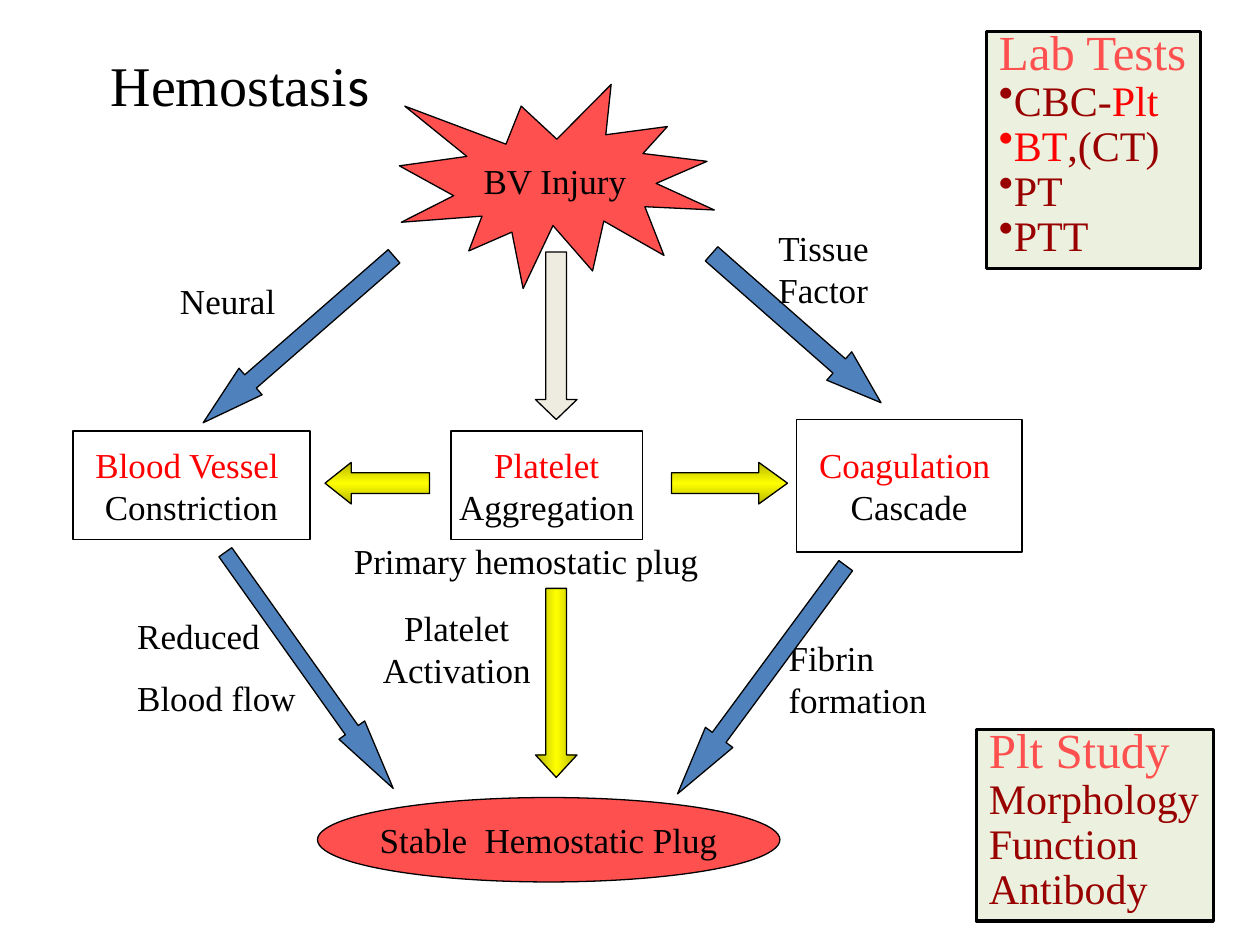
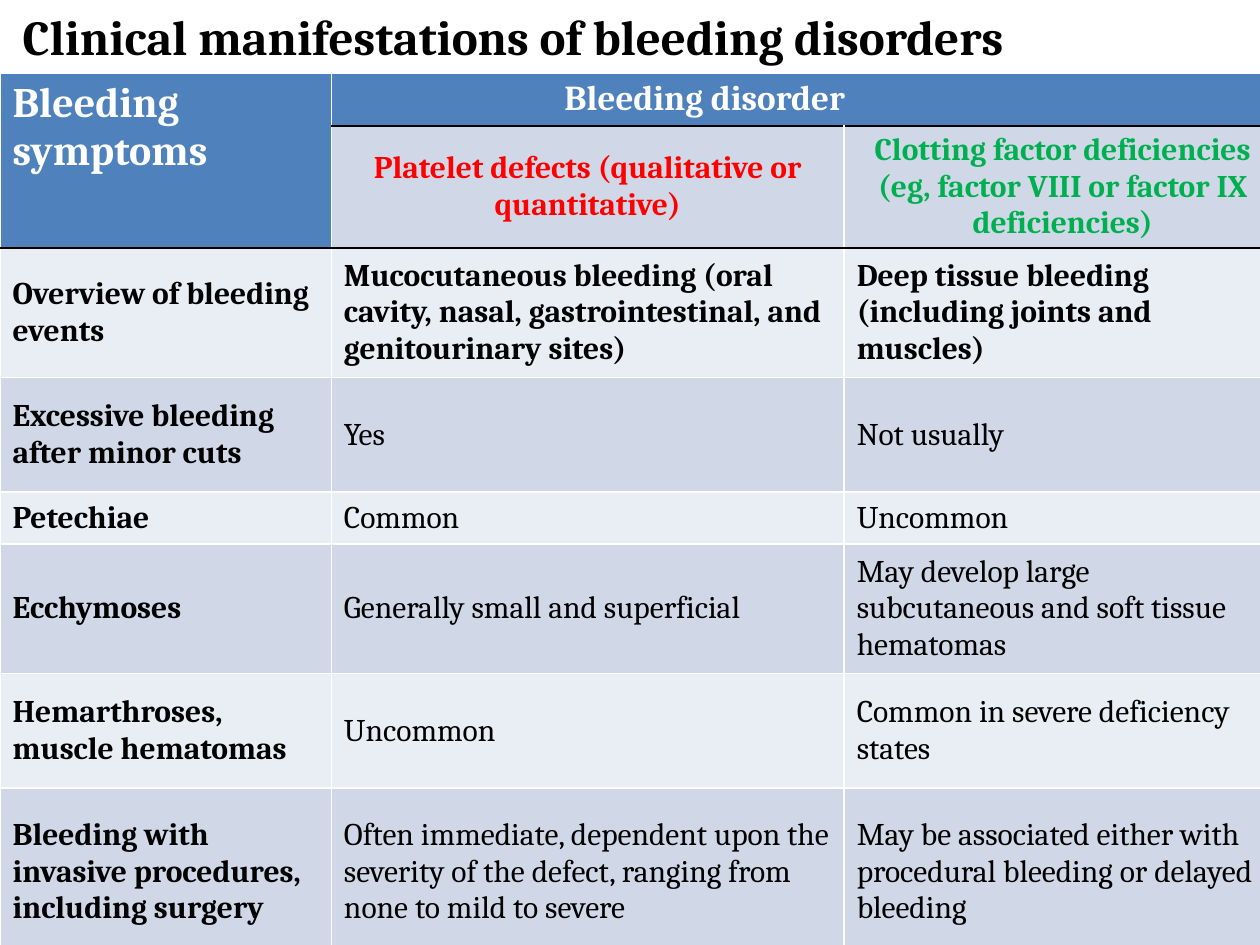
import copy

import pptx
import pptx.dml.color
import pptx.enum.shapes
import pptx.enum.text
import pptx.oxml
import pptx.oxml.ns
import pptx.util

Inches = pptx.util.Inches
Pt = pptx.util.Pt
SHAPE = pptx.enum.shapes.MSO_SHAPE
ALIGN = pptx.enum.text.PP_ALIGN
ANCHOR = pptx.enum.text.MSO_ANCHOR

COLORS = {
    "black": "000000", "white": "FFFFFF", "red": "FF0000", "coral": "FF5050",
    "maroon": "990000", "green": "00B050", "blue": "4F81BD", "cream": "EEECE1",
    "sage": "EBF1DE", "olive": "B6B600", "yellow": "FFFF00",
    "band_dark": "D0D8E8", "band_light": "E9EDF4",
}
SERIF = "Times New Roman"
TABLE_FONT = "Cambria"

COLUMN_WIDTHS = [2.63, 4.07, 3.47]
ROW_HEIGHTS = [0.38, 0.92, 1.03, 0.91, 0.41, 1.03, 0.91, 1.33]
SYMPTOMS = [
    ("Overview of bleeding events",
     "Mucocutaneous bleeding (oral cavity, nasal, gastrointestinal, and genitourinary sites)",
     "Deep tissue bleeding (including joints and muscles)"),
    ("Excessive bleeding after minor cuts", "Yes", "Not usually"),
    ("Petechiae", "Common", "Uncommon"),
    ("Ecchymoses", "Generally small and superficial",
     "May develop large subcutaneous and soft tissue hematomas"),
    ("Hemarthroses, muscle hematomas", "Uncommon",
     "Common in severe deficiency states"),
    ("Bleeding with invasive procedures, including surgery",
     "Often immediate, dependent upon the severity of the defect, "
     "ranging from none to mild to severe",
     "May be associated either with procedural bleeding or delayed bleeding"),
]


def rgb(color):
    return pptx.dml.color.RGBColor.from_string(COLORS[color])


def box(left, top, width, height):
    return Inches(left), Inches(top), Inches(width), Inches(height)


def add_run(paragraph, text, size, color="black", font=SERIF, bold=False):
    run = paragraph.add_run()
    run.text = text
    run.font.size = Pt(size)
    run.font.name = font
    run.font.bold = bold
    run.font.color.rgb = rgb(color)


def next_paragraph(frame, index, align, space_before=0):
    paragraph = frame.add_paragraph() if index else frame.paragraphs[0]
    paragraph.alignment = align
    if index and space_before:
        paragraph.space_before = Pt(space_before)
    return paragraph


def write_lines(frame, lines, align, space_before=0):
    for index, (text, color) in enumerate(lines):
        paragraph = next_paragraph(frame, index, align, space_before)
        add_run(paragraph, text, 20, color)


def add_title(slide, place, runs, size, align, anchor, bold=False):
    title = slide.shapes.title
    title.left, title.top, title.width, title.height = box(*place)
    title.text_frame.vertical_anchor = anchor
    title.text_frame.auto_size = pptx.enum.text.MSO_AUTO_SIZE.NONE
    paragraph = title.text_frame.paragraphs[0]
    paragraph.alignment = align
    for text, font in runs:
        add_run(paragraph, text, size, font=font, bold=bold)


def add_figure(slide, kind, place, fill=None, line_width=0.75):
    figure = slide.shapes.add_shape(kind, *box(*place))
    figure.shadow.inherit = False
    if fill:
        figure.fill.solid()
        figure.fill.fore_color.rgb = rgb(fill)
    else:
        figure.fill.background()
    figure.line.color.rgb = rgb("black")
    figure.line.width = Pt(line_width)
    return figure


def add_node(slide, kind, place, lines, fill=None):
    frame = add_figure(slide, kind, place, fill).text_frame
    frame.word_wrap = False
    frame.vertical_anchor = ANCHOR.MIDDLE
    write_lines(frame, lines, ALIGN.CENTER)


def add_arrow(slide, kind, place, head, fill="blue", rotation=0):
    arrow = add_figure(slide, kind, place, fill)
    arrow.adjustments[0] = 0.5
    arrow.adjustments[1] = head
    arrow.rotation = rotation
    return arrow


def add_glowing_arrow(slide, kind, place, head, angle):
    fill = add_arrow(slide, kind, place, head).fill
    fill.gradient()
    fill.gradient_angle = angle
    return fill


def shade_arrow(slide, kind, place, head, angle):
    arrow = add_arrow(slide, kind, place, head)
    arrow.fill.gradient()
    arrow.fill.gradient_angle = angle
    stop_list = next(arrow.element.iter(pptx.oxml.ns.qn("a:gsLst")))
    stop_list.append(copy.deepcopy(stop_list[0]))
    shades = [(0, "olive"), (0.5, "yellow"), (1, "olive")]
    for stop, (position, color) in zip(arrow.fill.gradient_stops, shades):
        stop.position = position
        stop.color.rgb = rgb(color)


def add_label(slide, place, lines, align=ALIGN.LEFT, anchor=ANCHOR.TOP):
    frame = slide.shapes.add_textbox(*box(*place)).text_frame
    frame.word_wrap = True
    frame.vertical_anchor = anchor
    write_lines(frame, [(line, "black") for line in lines], align, space_before=11)
    return frame


def add_lab_panel(slide, place, heading, entries, bulleted=False):
    frame = add_figure(slide, SHAPE.RECTANGLE, place, "sage", 2).text_frame
    frame.word_wrap = False
    frame.vertical_anchor = ANCHOR.TOP
    for index, runs in enumerate([[(heading, "coral")], *entries]):
        paragraph = next_paragraph(frame, index, ALIGN.LEFT, 5.5)
        paragraph.line_spacing = 0.7
        if index and bulleted:
            properties = paragraph._p.get_or_add_pPr()
            properties.set("marL", "0")
            properties.set("indent", "0")
            bullet = pptx.oxml.parse_xml(
                f'<a:buChar {pptx.oxml.ns.nsdecls("a")} char="•"/>')
            properties.append(bullet)
        for text, color in runs:
            add_run(paragraph, text, 24 if index else 28, color)


def set_borders(cell, top, bottom):
    properties = cell._tc.get_or_add_tcPr()
    sides = [("L", "white"), ("R", "white"), ("T", top), ("B", bottom)]
    for position, (side, color) in enumerate(sides):
        properties.insert(position, pptx.oxml.parse_xml(
            f'<a:ln{side} {pptx.oxml.ns.nsdecls("a")} w="12700"><a:solidFill>'
            f'<a:srgbClr val="{COLORS[color]}"/></a:solidFill></a:ln{side}>'))


def fill_cell(cell, text, size, color, fill, bold, align=ALIGN.LEFT,
              anchor=ANCHOR.MIDDLE):
    cell.fill.solid()
    cell.fill.fore_color.rgb = rgb(fill)
    cell.vertical_anchor = anchor
    paragraph = cell.text_frame.paragraphs[0]
    paragraph.alignment = align
    add_run(paragraph, text, size, color, TABLE_FONT, bold)


def add_symptom_table(slide):
    table = slide.shapes.add_table(
        len(ROW_HEIGHTS), len(COLUMN_WIDTHS),
        *box(0, 0.58, sum(COLUMN_WIDTHS), sum(ROW_HEIGHTS))).table
    table.first_row = table.horz_banding = False
    for column, width in zip(table.columns, COLUMN_WIDTHS):
        column.width = Inches(width)
    for row, height in zip(table.rows, ROW_HEIGHTS):
        row.height = Inches(height)
    table.cell(0, 0).merge(table.cell(1, 0))
    table.cell(0, 1).merge(table.cell(0, 2))

    fill_cell(table.cell(0, 0), "Bleeding symptoms", 24, "white", "blue", True,
              anchor=ANCHOR.TOP)
    disorder = table.cell(0, 1)
    fill_cell(disorder, "Bleeding disorder", 20, "white", "blue", True,
              anchor=ANCHOR.TOP)
    disorder_properties = disorder.text_frame.paragraphs[0]._p.get_or_add_pPr()
    disorder_properties.set("marL", str(Inches(1.75)))
    fill_cell(table.cell(1, 1), "Platelet defects (qualitative or quantitative)",
              18, "red", "band_dark", True, ALIGN.CENTER)
    fill_cell(table.cell(1, 2),
              "Clotting factor deficiencies (eg, factor VIII or factor IX deficiencies)",
              18, "green", "band_dark", True, ALIGN.CENTER)

    for row, texts in enumerate(SYMPTOMS, start=2):
        band = "band_dark" if row % 2 else "band_light"
        for column, text in enumerate(texts):
            fill_cell(table.cell(row, column), text, 18, "black", band,
                      bold=column == 0 or row == 2)

    for row in range(len(ROW_HEIGHTS)):
        for column in range(len(COLUMN_WIDTHS)):
            cell = table.cell(row, column)
            if not cell.is_spanned:
                set_borders(cell, "black" if row in (1, 2) else "white",
                            "black" if row < 2 else "white")


def build_hemostasis(slide):
    add_title(slide, (0.58, 0.33, 2.65, 0.67),
              [("Hemostasi", SERIF), ("s", "Calibri")], 32,
              ALIGN.CENTER, ANCHOR.MIDDLE)
    add_arrow(slide, SHAPE.DOWN_ARROW, (4.25, 2, 0.33, 1.33), 0.48, "cream")
    add_node(slide, SHAPE.EXPLOSION1, (3.17, 0.67, 2.5, 1.62),
             [("BV Injury", "black")], "coral")
    for place, factor, response in [
        ((3.58, 3.42, 1.52, 0.86), "Platelet", "Aggregation"),
        ((0.58, 3.42, 1.88, 0.86), "Blood Vessel ", "Constriction"),
        ((6.32, 3.33, 1.79, 1.05), "Coagulation ", "Cascade"),
    ]:
        add_node(slide, SHAPE.FLOWCHART_PROCESS, place,
                 [(factor, "red"), (response, "black")])
    add_node(slide, SHAPE.OVAL, (2.52, 6.33, 3.67, 0.67),
             [("Stable  Hemostatic Plug", "black")], "coral")

    activation = slide.shapes.add_textbox(*box(2.9, 4.77, 1.45, 0.75)).text_frame
    activation.vertical_anchor = ANCHOR.MIDDLE
    activation.word_wrap = True
    write_lines(activation, [("Platelet", "black"), ("Activation", "black")],
                ALIGN.CENTER)

    add_label(slide, (6.16, 5, 1.61, 0.77), ["Fibrin formation"])
    for place, head, rotation in [
        ((2.23, 1.69, 0.28, 2.01), 1.78, 48.9),
        ((2.33, 4.17, 0.25, 2.3), 2.27, 324.6),
        ((5.91, 4.27, 0.27, 2.25), 2.06, 36.4),
        ((6.17, 1.71, 0.3, 1.79), 1.47, 311.3),
    ]:
        add_arrow(slide, SHAPE.DOWN_ARROW, place, head, rotation=rotation)
    add_label(slide, (0.99, 4.83, 1.61, 0.93), ["Reduced", "Blood flow"])
    add_label(slide, (6.08, 1.75, 1.61, 0.77), ["Tissue Factor"])
    add_label(slide, (2.71, 4.23, 3.4, 0.43), ["Primary hemostatic plug"])
    add_label(slide, (1.33, 2.17, 1.61, 0.43), ["Neural"])

    shade_arrow(slide, SHAPE.DOWN_ARROW, (4.25, 4.67, 0.33, 1.5), 0.54, 0)
    shade_arrow(slide, SHAPE.RIGHT_ARROW, (5.33, 3.67, 0.92, 0.33), 0.69, 90)
    shade_arrow(slide, SHAPE.LEFT_ARROW, (2.58, 3.67, 0.83, 0.33), 0.63, 90)

    add_lab_panel(slide, (7.83, 0.25, 1.7, 1.88), "Lab Tests", [
        [("CBC-", "maroon"), ("Plt", "red")],
        [("BT", "red"), (",(CT)", "maroon")],
        [("PT", "maroon")],
        [("PTT", "maroon")],
    ], bulleted=True)
    add_lab_panel(slide, (7.75, 5.79, 1.88, 1.52), "Plt Study",
                  [[(study, "maroon")] for study in ("Morphology", "Function", "Antibody")])


def build_manifestations(slide):
    add_symptom_table(slide)
    add_title(slide, (0.08, 0, 9.83, 0.57),
              [("Clinical manifestations of bleeding disorders", TABLE_FONT)], 28,
              ALIGN.LEFT, ANCHOR.TOP, bold=True)


def main():
    deck = pptx.Presentation()
    deck.slide_width, deck.slide_height = Inches(10), Inches(7.5)
    title_only = deck.slide_layouts[5]
    for build in (build_hemostasis, build_manifestations):
        build(deck.slides.add_slide(title_only))
    deck.save("out.pptx")


if __name__ == "__main__":
    main()
